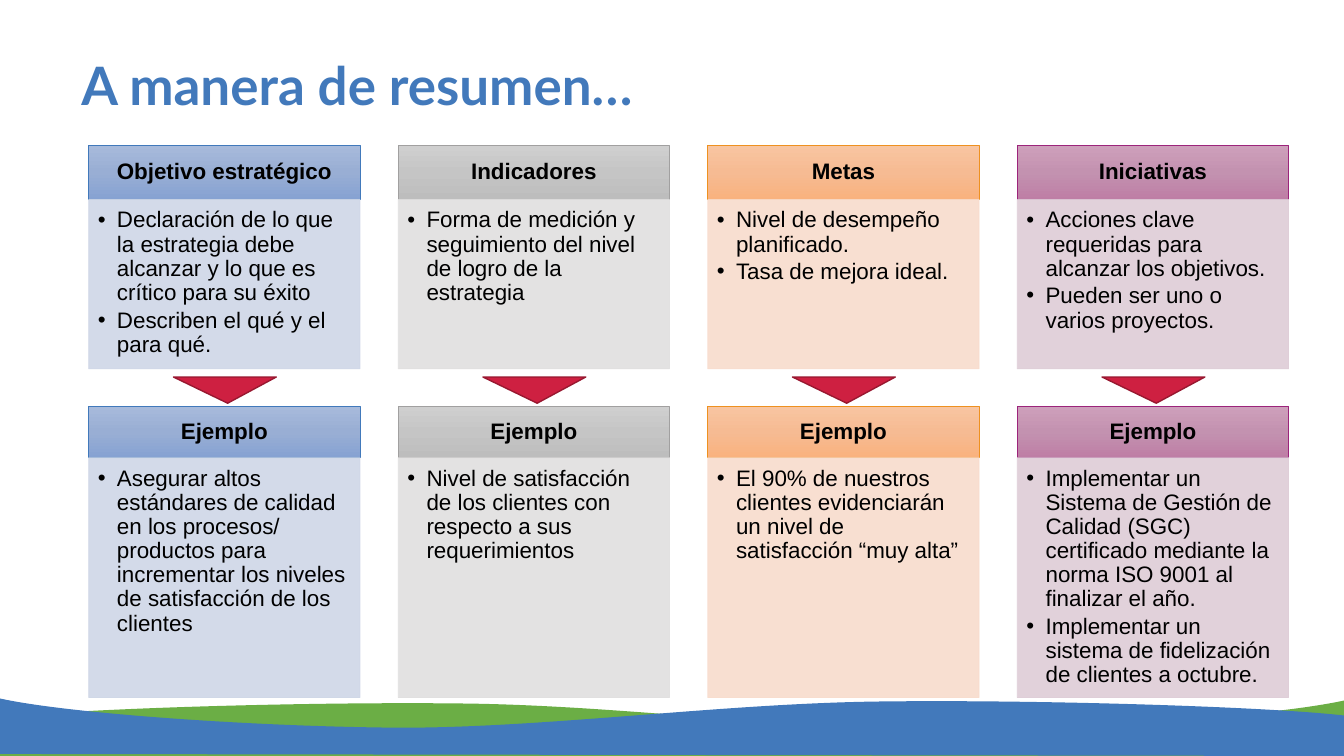
from copy import deepcopy
from dataclasses import dataclass

from lxml.etree import SubElement as Sub
from pptx import Presentation
from pptx.dml.color import RGBColor as RGB
from pptx.enum.shapes import MSO_SHAPE as Form
from pptx.enum.text import MSO_ANCHOR as Anchor, PP_ALIGN as Align
from pptx.oxml.ns import qn
from pptx.util import Inches, Pt


@dataclass(frozen=True)
class Theme:
    blue: str = "4279BB"
    green: str = "6BAE45"
    ink: str = "000000"
    arrow: str = "CE2041"
    edge: str = "981830"
    head_font: str = "Lato"
    font: str = "Arial"
    title: float = 37.8
    size: float = 16


@dataclass(frozen=True)
class Hue:
    """Colours of one column: head gradient, head line and body."""
    grad: tuple
    line: str
    body: str


T = Theme()
WIDE, HIGH = 13.33, 7.5
LEFT, STEP, COL = 0.88, 3.07, 2.69
GAP = 0.84  # arrow's offset in its column
HUES = [
    Hue(("A7BADB", "99AED4", "86A2D2"), "4179BB", "CFD7E7"),
    Hue(("CFCFCF", "C5C5C5", "BDBDBD"), "A1A0A0", "E0DFDF"),
    Hue(("F8C5A1", "F6BB93", "F9B27E"), "EE9120", "F8DCCD"),
    Hue(("CE9FBB", "C392B0", "BE7EA5"), "9C247B", "DECDD7"),
]
TERMS = [
    ("Objetivo estratégico", [
        "Declaración de lo que la estrategia debe alcanzar y lo que es "
        "crítico para su éxito",
        "Describen el qué y el para qué."]),
    ("Indicadores", [
        "Forma de medición y seguimiento del nivel de logro de la estrategia"]),
    ("Metas", ["Nivel de desempeño planificado.", "Tasa de mejora ideal."]),
    ("Iniciativas", [
        "Acciones clave requeridas para alcanzar los objetivos.",
        "Pueden ser uno o varios proyectos."]),
]
CASES = [("Ejemplo", lines) for lines in (
    ["Asegurar altos estándares de calidad en los procesos/ productos para "
     "incrementar los niveles de satisfacción de los clientes"],
    ["Nivel de satisfacción de los clientes con respecto a sus requerimientos"],
    ["El 90% de nuestros clientes evidenciarán un nivel de satisfacción "
     "“muy alta”"],
    ["Implementar un Sistema de Gestión de Calidad (SGC) certificado mediante "
     "la norma ISO 9001 al finalizar el año.",
     "Implementar un sistema de fidelización de clientes a octubre."],
)]
# Start of the wave, then its curves: two controls and an end each
CREST = [
    (-0.01, 7.12),
    (0.76, 7.03), (3.06, 6.96), (4.62, 6.98),
    (6.18, 7.0), (7.89, 7.24), (9.35, 7.24),
    (10.8, 7.23), (12.65, 7.1), (13.33, 6.95),
]
BASE = [(13.34, 7.5), (0, 7.52)]


def write(shape, lines, size=T.size, font=T.font, color=T.ink, bold=False,
          align=Align.LEFT, anchor=Anchor.TOP, inset=(0.1, 0.05, 0.1, 0.05),
          after=0, bullet=False):
    frame = shape.text_frame
    frame.word_wrap = True
    frame.vertical_anchor = anchor
    (frame.margin_left, frame.margin_top,
     frame.margin_right, frame.margin_bottom) = map(Inches, inset)
    for i, line in enumerate(lines):
        para = frame.add_paragraph() if i else frame.paragraphs[0]
        para.alignment = align
        para.line_spacing = 0.9
        para.space_after = Pt(after)
        run = para.add_run()
        run.text = line
        run.font.size, run.font.name, run.font.bold = Pt(size), font, bold
        run.font.color.rgb = RGB.from_string(color)
        if bullet:
            props = para._p.get_or_add_pPr()
            props.set("marL", str(Inches(0.19)))
            props.set("indent", str(Inches(-0.19)))
            Sub(props, qn("a:buFont"), typeface=T.font)
            Sub(props, qn("a:buChar"), char="•")


def paint(shape, fill, line=None, width=0.5):
    shape.shadow.inherit = False
    shape.fill.solid()
    shape.fill.fore_color.rgb = RGB.from_string(fill)
    if line:
        shape.line.color.rgb = RGB.from_string(line)
        shape.line.width = Pt(width)
    else:
        shape.line.fill.background()


def shade(shape, colors):
    """Fill from top to bottom through three colours."""
    fill = shape.fill
    fill.gradient()
    fill.gradient_angle = 270
    stops = shape.element.spPr.find(qn("a:gradFill")).find(qn("a:gsLst"))
    stops.insert(1, deepcopy(stops[0]))
    for stop, color, place in zip(fill.gradient_stops, colors, (0, 0.5, 1)):
        stop.color.rgb = RGB.from_string(color)
        stop.position = place


def fade(shape, share):
    for color in shape.element.spPr.iter(qn("a:srgbClr")):
        Sub(color, qn("a:alpha"), val=str(int(share * 100000)))


def block(slide, form, x, y, w, h):
    return slide.shapes.add_shape(form, *map(Inches, (x, y, w, h)))


def card(slide, x, y, w, h, cap, hue, name, lines):
    """Head of height cap over a bulleted body."""
    head = block(slide, Form.RECTANGLE, x, y, w, cap)
    paint(head, hue.body, hue.line)
    shade(head, hue.grad)
    write(head, [name], bold=True, align=Align.CENTER, anchor=Anchor.MIDDLE,
          inset=(0.12, 0.07, 0.12, 0.07), after=5.6)
    body = block(slide, Form.RECTANGLE, x, y + cap, w, h - cap)
    paint(body, hue.body, hue.body)
    fade(body, 0.9)
    write(body, lines, inset=(0.09, 0.09, 0.13, 0.14), after=2.4, bullet=True)


def row(slide, y, h, cap, cards):
    for i, (hue, (name, lines)) in enumerate(zip(HUES, cards)):
        card(slide, LEFT + i * STEP, y, COL, h, cap, hue, name, lines)


def arrows(slide, y, w, h):
    for i in range(len(HUES)):
        arrow = block(slide, Form.ISOSCELES_TRIANGLE,
                      LEFT + GAP + i * STEP, y, w, h)
        arrow.adjustments[0] = 0.473
        arrow.rotation = 180
        paint(arrow, T.arrow, T.edge, 1)


def bend(shape, count):
    """Turn the first lines of an outline, three by three, into curves."""
    lines = list(shape.element.spPr.iter(qn("a:lnTo")))[:count]
    for i in range(0, count, 3):
        curve = lines[i].makeelement(qn("a:cubicBezTo"))
        lines[i].addprevious(curve)
        for line in lines[i:i + 3]:
            curve.append(line[0])
            line.getparent().remove(line)


def wave(slide, color, flip=False, lift=0):
    spots = [(Inches(WIDE - x if flip else x), Inches(y - lift))
             for x, y in CREST + BASE]
    draft = slide.shapes.build_freeform(*spots[0])
    draft.add_line_segments(spots[1:], close=True)
    shape = draft.convert_to_shape()
    bend(shape, len(CREST) - 1)
    paint(shape, color)


def title(slide, x, y, w, h, text):
    box = slide.shapes.add_textbox(*map(Inches, (x, y, w, h)))
    write(box, [text], size=T.title, font=T.head_font, color=T.blue,
          bold=True, anchor=Anchor.MIDDLE)


def main():
    deck = Presentation()
    deck.slide_width, deck.slide_height = Inches(WIDE), Inches(HIGH)
    slide = deck.slides.add_slide(deck.slide_layouts[6])
    wave(slide, T.green)
    wave(slide, T.blue, flip=True, lift=0.02)
    title(slide, 0.71, 0.54, 11.34, 0.68, "A manera de resumen…")
    row(slide, 4.03, 2.89, 0.51, CASES)
    row(slide, 1.44, 2.22, 0.54, TERMS)
    arrows(slide, 3.74, 1.02, 0.26)
    deck.save("out.pptx")


if __name__ == "__main__":
    main()
